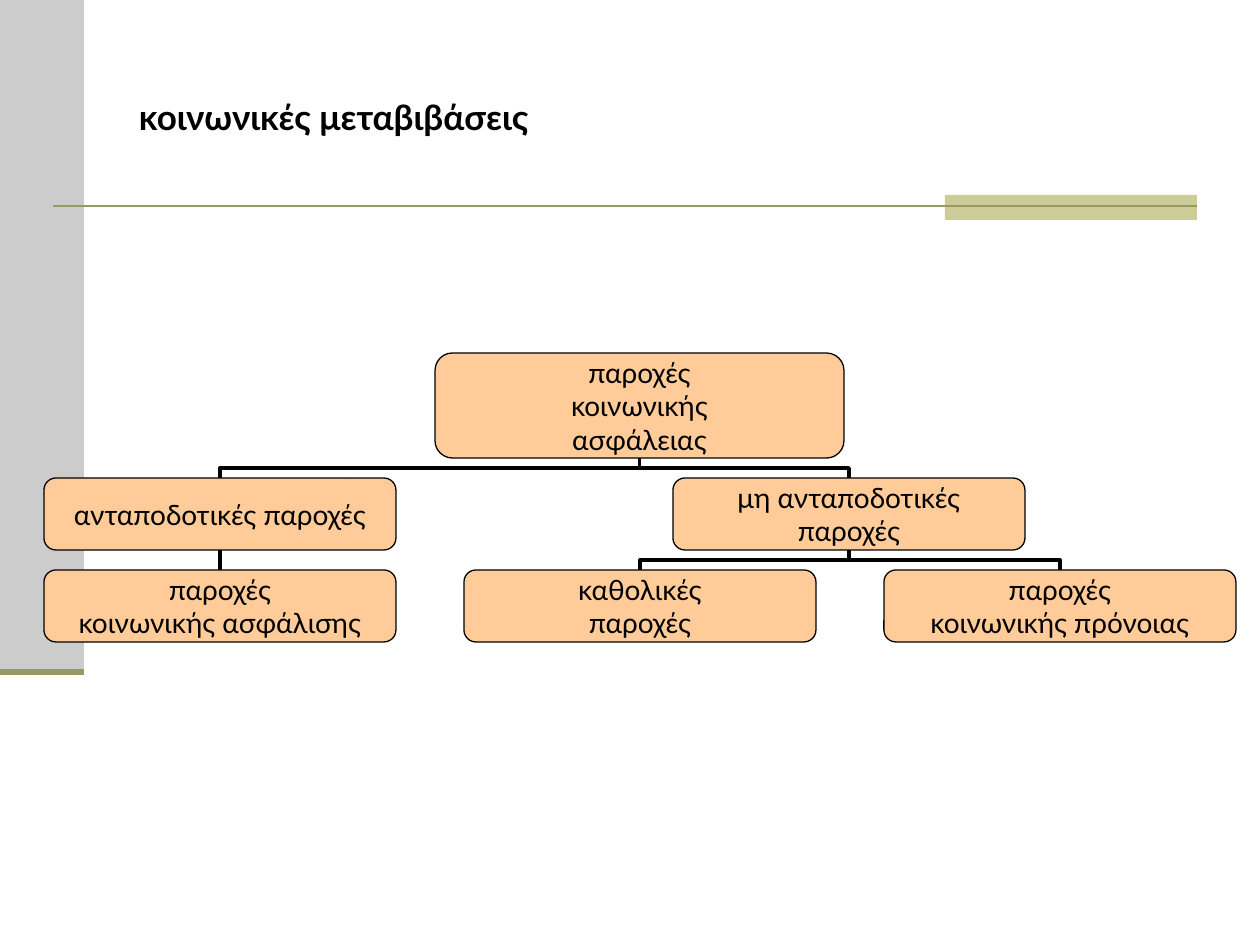
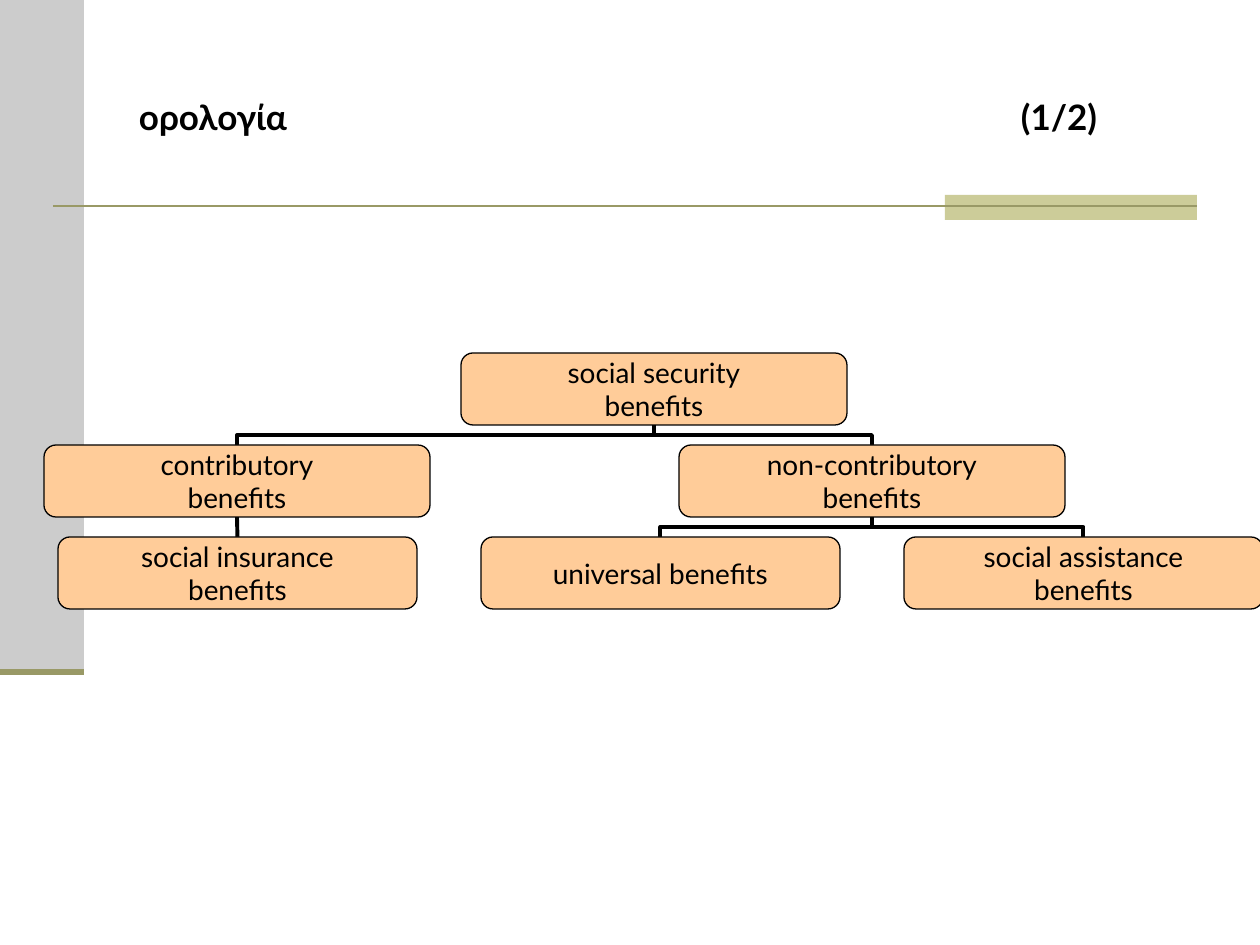
import pptx
import pptx.util
import pptx.dml.color
import pptx.enum.shapes
import pptx.enum.text
import pptx.oxml.ns
import lxml.etree

SCALE = 914400 / 126
FONT = "Lato"
BLACK, GREY, OLIVE, SAGE, PEACH = "000000", "CCCCCC", "999966", "CCCC99", "FFCC99"
TOP, ROW, GAP = 353, 72, 20
SHAPE = pptx.enum.shapes.MSO_SHAPE
LINK = pptx.enum.shapes.MSO_CONNECTOR
ALIGN = pptx.enum.text.PP_ALIGN

CHARTS = [
    {
        "title": "κοινωνικές μεταβιβάσεις",
        "root": (435, 409, 105, "παροχές\nκοινωνικής\nασφάλειας"),
        "kinds": (44, 629, 352, ["ανταποδοτικές παροχές", "μη ανταποδοτικές\nπαροχές"]),
        "leaves": (44, 420, 352, ["παροχές\nκοινωνικής ασφάλισης", "καθολικές\nπαροχές",
                                  "παροχές\nκοινωνικής πρόνοιας"]),
    },
    {
        "title": "ορολογία\t(1/2)",
        "root": (461, 386, ROW, "social security\nbenefits"),
        "kinds": (44, 635, 386, ["contributory\nbenefits", "non-contributory\nbenefits"]),
        "leaves": (58, 423, 359, ["social insurance\nbenefits", "universal benefits",
                                  "social assistance\nbenefits"]),
    },
]


def px(size):
    """Turn pixels into EMU."""
    return pptx.util.Emu(round(size * SCALE))


def tint(code):
    """Turn a hex string into a colour."""
    return pptx.dml.color.RGBColor.from_string(code)


def write(shape, text, size=16, bold=False, align=ALIGN.CENTER, wrap=False, pad=(6, 3), tab=None):
    """Fill a shape with formatted text, one paragraph a line."""
    frame = shape.text_frame
    frame.word_wrap = wrap
    frame.vertical_anchor = pptx.enum.text.MSO_ANCHOR.MIDDLE
    frame.margin_left = frame.margin_right = px(pad[0])
    frame.margin_top = frame.margin_bottom = px(pad[1])
    frame.text = text
    for para in frame.paragraphs:
        para.alignment = align
        if tab:
            stops = lxml.etree.SubElement(para._p.get_or_add_pPr(), pptx.oxml.ns.qn("a:tabLst"))
            lxml.etree.SubElement(stops, pptx.oxml.ns.qn("a:tab"), pos=str(px(tab)), algn="l")
        for run in para.runs:
            run.font.name = FONT
            run.font.size = pptx.util.Pt(size)
            run.font.bold = bold
            run.font.color.rgb = tint(BLACK)


def block(slide, left, top, width, height, fill, kind=SHAPE.RECTANGLE, edge=None):
    """Draw a filled shape, outlined when an edge colour is given."""
    shape = slide.shapes.add_shape(kind, px(left), px(top), px(width), px(height))
    shape.shadow.inherit = False
    shape.fill.solid()
    shape.fill.fore_color.rgb = tint(fill)
    if edge:
        shape.line.color.rgb = tint(edge)
        shape.line.width = pptx.util.Pt(0.75)
    else:
        shape.line.fill.background()
    return shape


def rule(slide, start, end, color, weight, kind=LINK.STRAIGHT):
    """Draw a connector without a shadow."""
    line = slide.shapes.add_connector(kind, *map(px, start + end))
    line.line.color.rgb = tint(color)
    line.line.width = pptx.util.Pt(weight)
    lxml.etree.SubElement(line._element.spPr, pptx.oxml.ns.qn("a:effectLst"))
    return line


def node(slide, left, top, width, height, text):
    """Draw one labelled box of the tree."""
    box = block(slide, left, top, width, height, PEACH, SHAPE.ROUNDED_RECTANGLE, BLACK)
    write(box, text)
    return box


def level(slide, top, left, step, width, texts):
    """Draw a row of evenly spaced boxes."""
    return [node(slide, left + i * step, top, width, ROW, text) for i, text in enumerate(texts)]


def join(slide, child, parent, back):
    """Link a child's top to its parent's bottom, behind the boxes."""
    start = child.left + child.width // 2
    end = parent.left + parent.width // 2
    bent = abs(end - start) > px(10)
    line = rule(slide, (0, 0), (0, 0), BLACK, 2.25, LINK.ELBOW if bent else LINK.STRAIGHT)
    line.begin_connect(child, 0)
    line.end_connect(parent, 2)
    if bent:
        foot = parent.top + parent.height
        drop, span = child.top - foot, abs(end - start)
        line.left, line.top = (start + end - drop) // 2, (foot + child.top - span) // 2
        line.width, line.height = drop, span
        right = start > end
        frame = line._element.spPr.find(pptx.oxml.ns.qn("a:xfrm"))
        frame.set("rot", str((90 if right else 270) * 60000))
        frame.set("flipH", str(int(right)))
        frame.set("flipV", "0")
    back._element.addprevious(line._element)


def base(slide, title):
    """Draw the side band, the rules and the title."""
    block(slide, 0, 0, 84, 672, GREY)
    block(slide, 945, 195, 252, 25, SAGE)
    rule(slide, (53, 206), (1197, 206), OLIVE, 1.5)
    rule(slide, (0, 672), (84, 672), OLIVE, 3.5)
    head = slide.shapes.add_textbox(px(126), px(38), px(1071), px(157))
    write(head, title, size=20, bold=True, align=ALIGN.LEFT, wrap=True, pad=(13, 6),
          tab=882 if "\t" in title else None)


def tree(slide, root, kinds, leaves):
    """Draw the three levels of benefits and their links."""
    left, width, height, text = root
    head = node(slide, left, TOP, width, height, text)
    top = TOP + height + GAP
    pair = level(slide, top, *kinds)
    ends = level(slide, top + ROW + GAP, *leaves)
    links = [(kid, head) for kid in pair] + list(zip(ends, (pair[0], pair[1], pair[1])))
    for child, parent in links:
        join(slide, child, parent, head)


def main():
    """Build the slides and save them."""
    deck = pptx.Presentation()
    deck.slide_width, deck.slide_height = px(1260), px(945)
    for chart in CHARTS:
        slide = deck.slides.add_slide(deck.slide_layouts[6])
        base(slide, chart["title"])
        tree(slide, chart["root"], chart["kinds"], chart["leaves"])
    deck.save("out.pptx")


if __name__ == "__main__":
    main()
